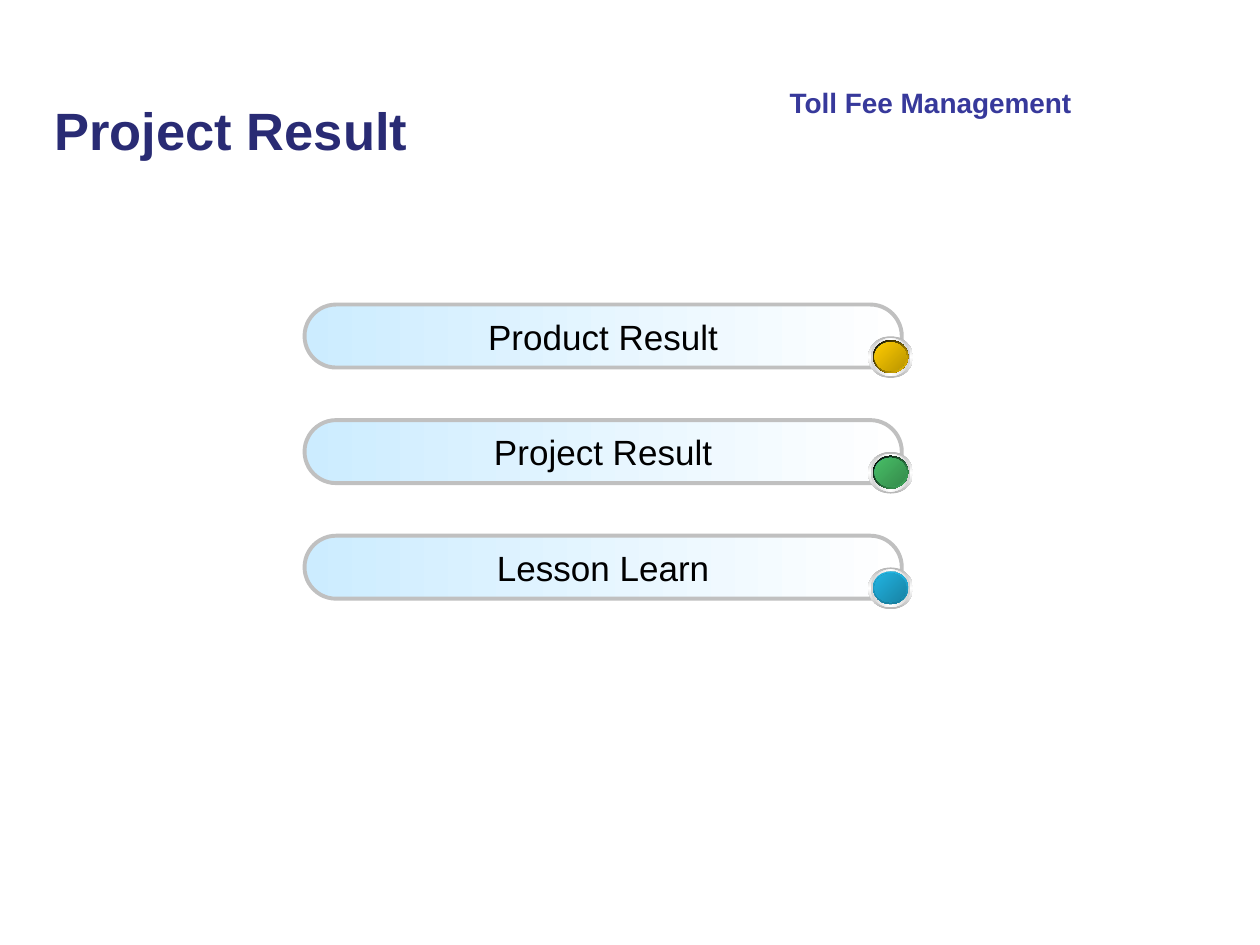
from copy import deepcopy

from pptx import Presentation
from pptx import util as u
from pptx.dml import color
from pptx.enum import shapes, text

COLORS = {
    "title": "292B74", "project": "37399B", "label": "000000",
    "sky": "CCECFF", "white": "FFFFFF", "border": "C0C0C0",
    "rim": "B6B6B6", "bevel": "D1D1D1", "teal": "36A1B6", "deep_teal": "297B8B",
    "black": "000000", "gold": "FFCC00", "dark_gold": "BA9500",
    "green": "48BE67", "dark_green": "358B4B",
    "blue": "21B3E1", "edge_blue": "1880A1", "dark_blue": "1883A4",
}


def paint(shape, names, angle):
    shape.shadow.inherit = False
    shape.fill.gradient()
    shape.fill.gradient_angle = (360 - angle) % 360
    stops = shape.fill.gradient_stops
    if len(names) == 3:
        first = stops[0]._gs
        first.addnext(deepcopy(first))
    stops = shape.fill.gradient_stops
    for index, (stop, name) in enumerate(zip(stops, names)):
        stop.position = index / (len(names) - 1)
        stop.color.rgb = color.RGBColor.from_string(COLORS[name])


def write(box, words, name, frame_format, font_format, align):
    frame = box.text_frame
    for key, value in frame_format.items():
        setattr(frame, key, value)
    para = frame.paragraphs[0]
    para.alignment = align
    span = para.add_run()
    span.text = words
    for key, value in font_format.items():
        setattr(span.font, key, value)
    span.font.name = "Arial"
    span.font.color.rgb = color.RGBColor.from_string(COLORS[name])


deck = Presentation()
deck.slide_width, deck.slide_height = u.Cm(25.4), u.Cm(19.05)
page = deck.slides.add_slide(deck.slide_layouts[6])

title = page.shapes.add_textbox(u.Cm(0.85), u.Cm(1.83), u.Cm(13.76), u.Cm(1.57))
write(title, "Project Result", "title",
      {"word_wrap": True, "vertical_anchor": text.MSO_ANCHOR.MIDDLE},
      {"size": u.Pt(30), "bold": True}, text.PP_ALIGN.LEFT)

results = [
    ("Product Result", ("black", "gold"), 45, ("gold", "dark_gold")),
    ("Project Result", ("black", "green"), 45, ("green", "dark_green")),
    ("Lesson Learn", ("blue", "edge_blue"), 90, ("blue", "dark_blue")),
]
for row, (words, edge, edge_angle, face) in enumerate(results):
    top = 6.14 + 2.33 * row
    bar = page.shapes.add_shape(shapes.MSO_SHAPE.ROUNDED_RECTANGLE,
                                u.Cm(6.14), u.Cm(top), u.Cm(12.04), u.Cm(1.27))
    bar.adjustments[0] = 0.5
    paint(bar, ("sky", "white"), 0)
    bar.line.color.rgb = color.RGBColor.from_string(COLORS["border"])
    bar.line.width = u.Pt(2.25)
    write(bar, words, "label",
          {"word_wrap": False, "vertical_anchor": text.MSO_ANCHOR.MIDDLE},
          {"size": u.Pt(20)}, text.PP_ALIGN.CENTER)

    button = page.shapes.add_group_shape()
    layers = [
        (17.5, 0.64, 0.91, 0.84, ("rim", "white", "rim"), 90),
        (17.55, 0.68, 0.81, 0.76, ("bevel", "white", "bevel"), 0),
        (17.6, 0.72, 0.71, 0.66, ("white", "teal", "white"), 45),
        (17.6, 0.72, 0.71, 0.66, edge, edge_angle),
        (17.63, 0.76, 0.64, 0.58, ("deep_teal", "teal", "deep_teal"), 315),
        (17.63, 0.76, 0.64, 0.58, face, 45),
    ]
    for left, drop, width, height, names, angle in layers:
        disc = button.shapes.add_shape(shapes.MSO_SHAPE.OVAL, u.Cm(left),
                                       u.Cm(top + drop), u.Cm(width), u.Cm(height))
        paint(disc, names, angle)
        disc.line.fill.background()

project = page.shapes.add_textbox(u.Cm(15.67), u.Cm(1.6), u.Cm(6.55), u.Cm(0.94))
write(project, "Toll Fee Management", "project",
      {"word_wrap": True, "auto_size": text.MSO_AUTO_SIZE.SHAPE_TO_FIT_TEXT},
      {"size": u.Pt(16), "bold": True}, text.PP_ALIGN.LEFT)

deck.save("out.pptx")
